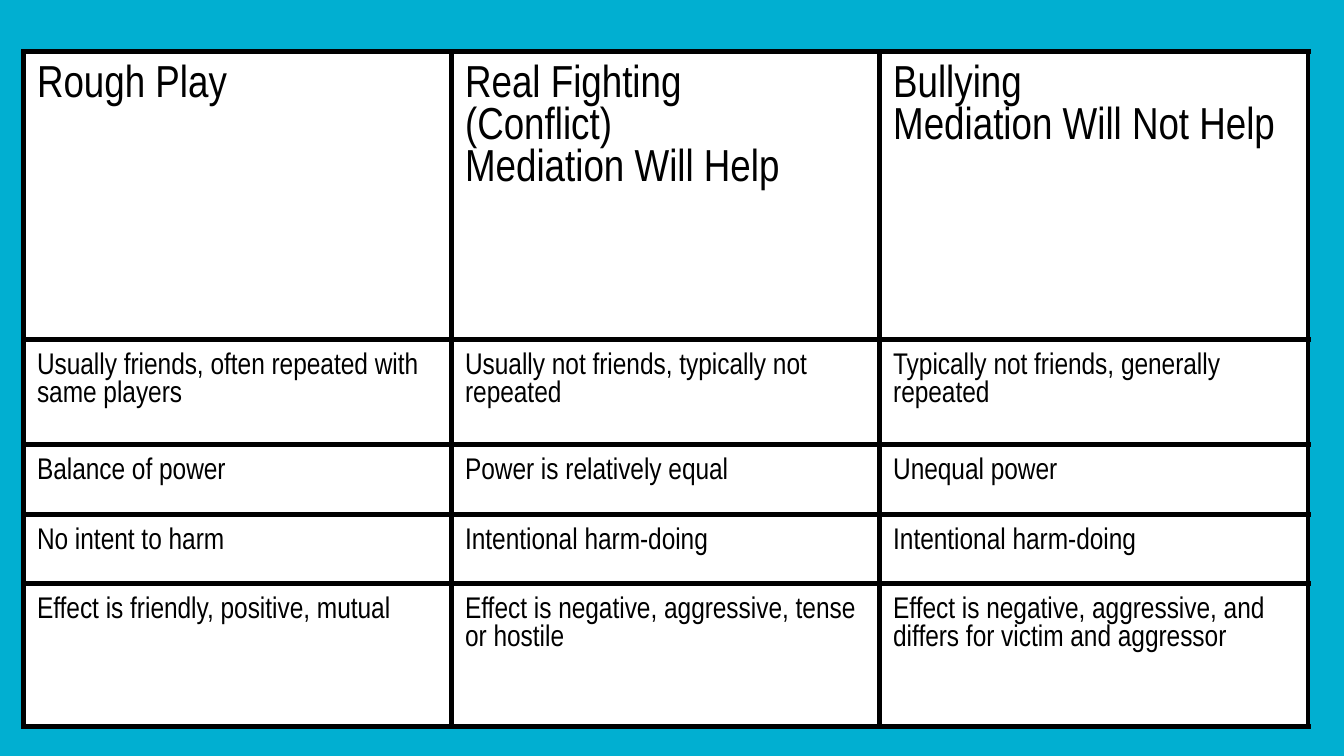
from dataclasses import dataclass

from lxml.etree import SubElement
from pptx import Presentation
from pptx.dml.color import RGBColor
from pptx.oxml.ns import qn
from pptx.table import _Cell
from pptx.util import Cm, Pt

COLORS = {"background": "01AFD1", "cell": "FFFFFF", "ink": "000000"}
FONT = "Arial Narrow"
BORDER_WIDTH = Pt(3)
CELL_MARGIN = Cm(0.25)
COLUMN_WIDTH = Cm(8.09)


@dataclass
class Row:
    height: float
    texts: tuple[str, str, str]
    size: int = 16


ROWS = [
    Row(5.43, ("Rough Play",
               "Real Fighting\n(Conflict)\nMediation Will Help",
               "Bullying\nMediation Will Not Help"), size=24),
    Row(2, ("Usually friends, often repeated with same players",
            "Usually not friends, typically not repeated",
            "Typically not friends, generally repeated")),
    Row(1.31, ("Balance of power", "Power is relatively equal", "Unequal power")),
    Row(1.31, ("No intent to harm", "Intentional harm-doing", "Intentional harm-doing")),
    Row(2.71, ("Effect is friendly, positive, mutual",
               "Effect is negative, aggressive, tense or hostile",
               "Effect is negative, aggressive, and differs for victim and aggressor")),
]


def add_borders(cell: _Cell) -> None:
    """Draw a solid border on all four sides of a cell."""
    properties = cell._tc.get_or_add_tcPr()
    for side in ("L", "R", "T", "B"):
        line = SubElement(properties, qn(f"a:ln{side}"), w=str(BORDER_WIDTH))
        fill = SubElement(line, qn("a:solidFill"))
        SubElement(fill, qn("a:srgbClr"), val=COLORS["ink"])


def fill_cell(cell: _Cell, text: str, size: int) -> None:
    """Write and format one cell."""
    add_borders(cell)
    cell.fill.solid()
    cell.fill.fore_color.rgb = RGBColor.from_string(COLORS["cell"])
    cell.margin_left = cell.margin_right = CELL_MARGIN
    cell.margin_top = cell.margin_bottom = CELL_MARGIN
    cell.text_frame.text = text
    for paragraph in cell.text_frame.paragraphs:
        for run in paragraph.runs:
            run.font.name = FONT
            run.font.size = Pt(size)
            run.font.bold = False
            run.font.color.rgb = RGBColor.from_string(COLORS["ink"])


def main() -> None:
    """Build the comparison slide and save it."""
    presentation = Presentation()
    presentation.slide_width, presentation.slide_height = Cm(25.4), Cm(14.29)
    slide = presentation.slides.add_slide(presentation.slide_layouts[6])
    slide.background.fill.solid()
    slide.background.fill.fore_color.rgb = RGBColor.from_string(COLORS["background"])

    column_count = len(ROWS[0].texts)
    height = Cm(sum(row.height for row in ROWS))
    table = slide.shapes.add_table(
        len(ROWS), column_count, Cm(0.45), Cm(0.98), COLUMN_WIDTH * column_count, height
    ).table
    table.first_row = table.horz_banding = False
    for column in table.columns:
        column.width = COLUMN_WIDTH
    for row_index, row in enumerate(ROWS):
        table.rows[row_index].height = Cm(row.height)
        for column_index, text in enumerate(row.texts):
            fill_cell(table.cell(row_index, column_index), text, row.size)

    presentation.save("out.pptx")


if __name__ == "__main__":
    main()
